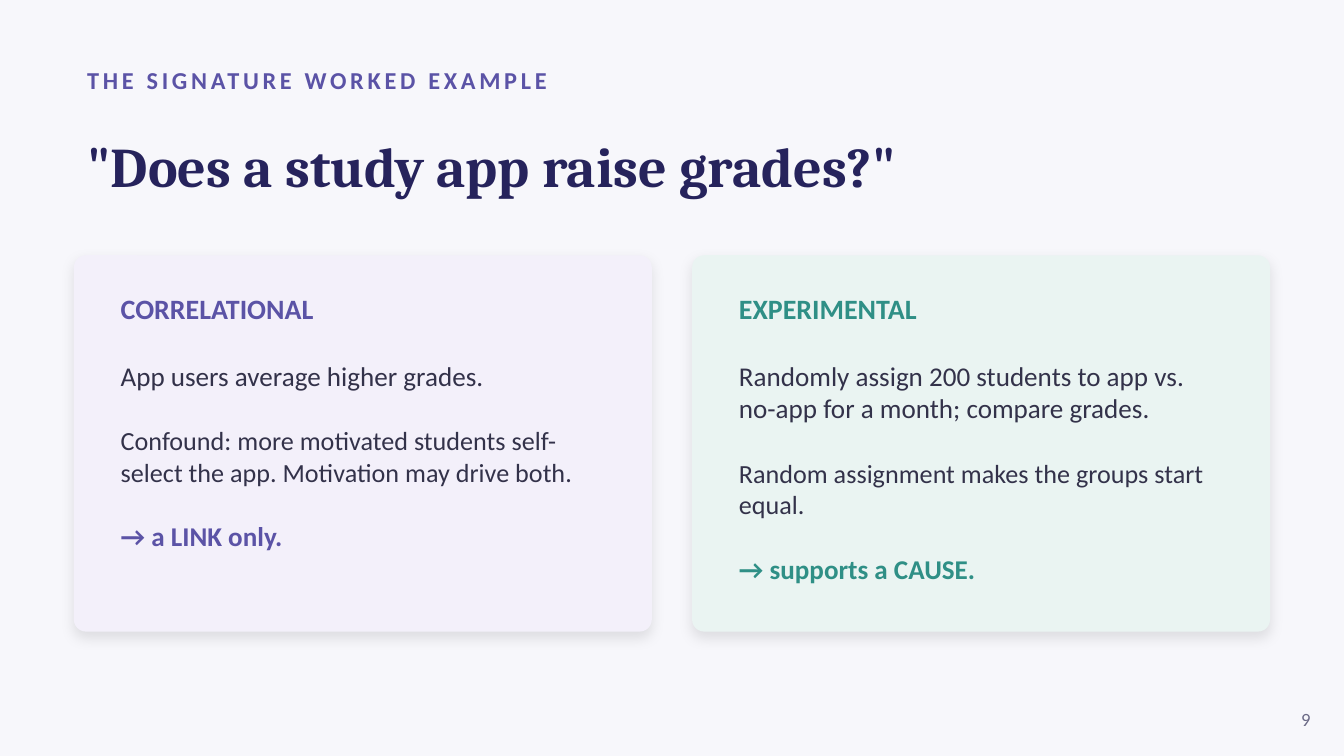
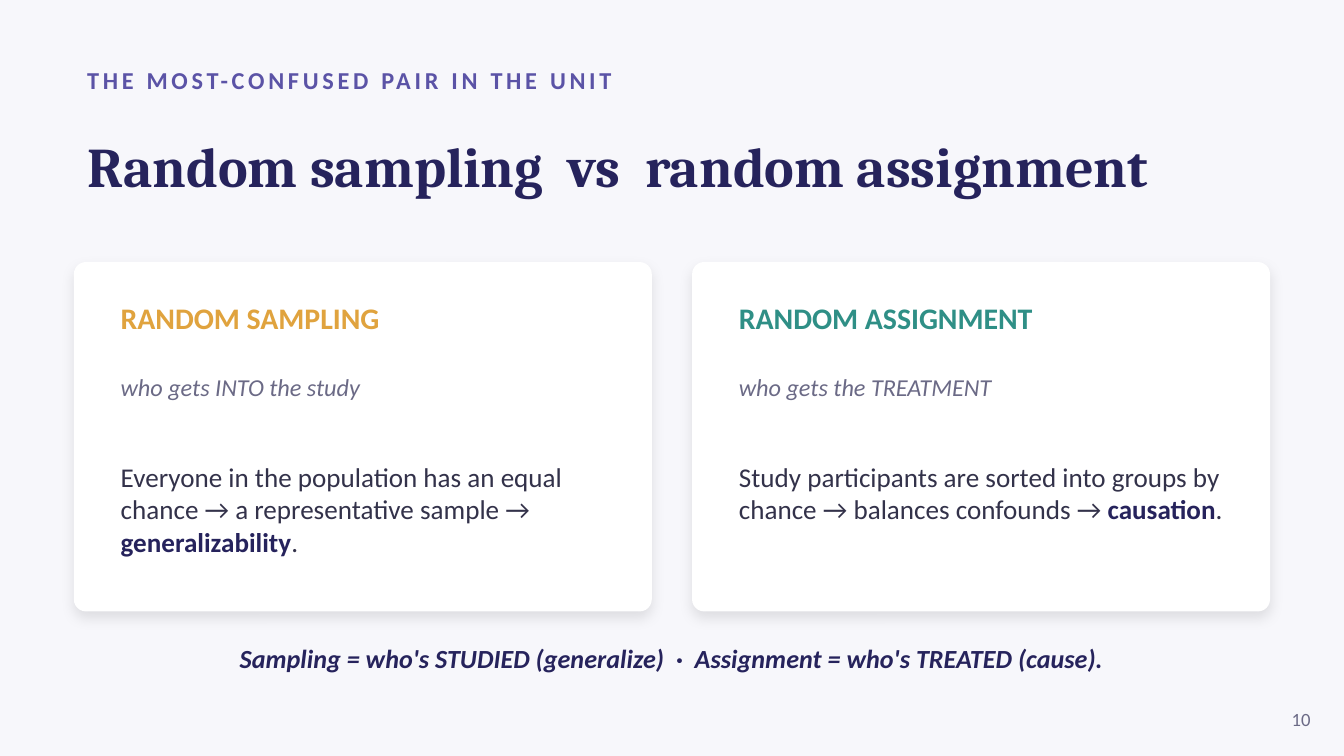
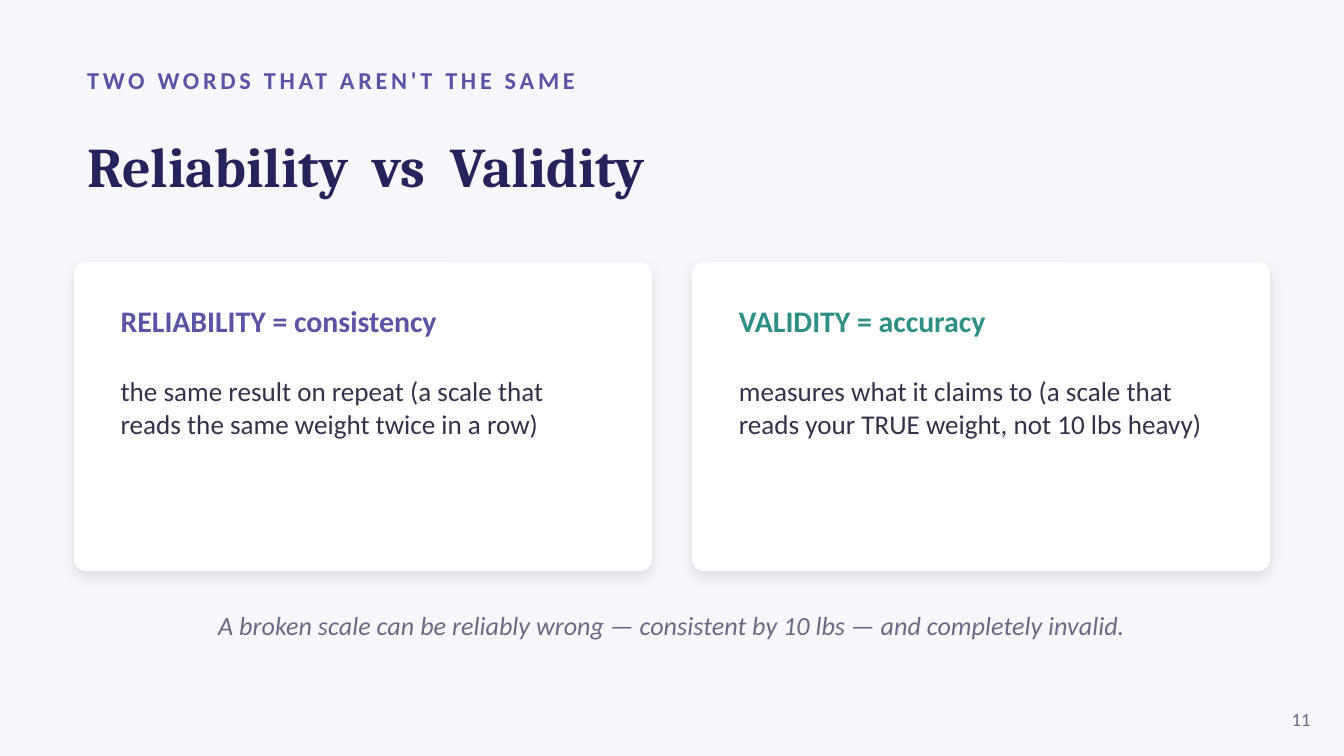
from lxml import etree
from pptx import Presentation
from pptx.dml.color import RGBColor
from pptx.enum.shapes import MSO_SHAPE as Shape
from pptx.enum.text import MSO_ANCHOR as Anchor, MSO_AUTO_SIZE as AutoSize, PP_ALIGN as Align
from pptx.oxml import parse_xml
from pptx.oxml.ns import nsdecls
from pptx.util import Pt

COLORS = {
    "background": "F7F7FB", "navy": "26235C", "purple": "5B53A6",
    "teal": "2F8F86", "amber": "E0A33E", "ink": "33324A", "muted": "6B6A86",
    "white": "FFFFFF", "lilac": "F3F0FA", "mint": "EAF4F2", "shadow": "000000",
}
LEFT, CONTENT_WIDTH = 39.6, 640.8
CARD_WIDTH, CARD_GAP, CARD_INSET, CORNER = 309.6, 21.6, 18, 6.48
LINE_HEIGHT = 1.22
TITLE_ONLY = 5


def rgb(name):
    """Return the named palette colour."""
    return RGBColor.from_string(COLORS[name])


def write(frame, text, *, size=14.5, color="ink", bold=False, italic=False,
          font="Calibri", spacing=0, align=Align.LEFT, blank_lines=0, joined=False):
    """Write text as a new paragraph, or join it to the last one."""
    para = frame.paragraphs[-1]
    if para.runs and not joined:
        para = frame.add_paragraph()
    if not joined:
        para.alignment = align
        para.space_before = Pt(0)
        para.space_after = Pt(round(blank_lines * size * LINE_HEIGHT, 1))
    span = para.add_run()
    span.text = text
    span.font.name, span.font.size = font, Pt(size)
    span.font.bold, span.font.italic = bold, italic
    span.font.color.rgb = rgb(color)
    if spacing:
        span._r.get_or_add_rPr().set("spc", str(spacing * 100))


def place(shape, box, anchor=Anchor.MIDDLE):
    """Place a text shape in its box and return its text frame."""
    shape.left, shape.top, shape.width, shape.height = (Pt(length) for length in box)
    frame = shape.text_frame
    frame.word_wrap = True
    frame.auto_size = AutoSize.NONE
    frame.vertical_anchor = anchor
    return frame


def add_text(page, box, anchor=Anchor.MIDDLE):
    """Add a text box and return its text frame."""
    return place(page.shapes.add_textbox(0, 0, 0, 0), box, anchor)


def add_shadow(shape):
    """Give a shape a soft shadow below it."""
    effects = parse_xml(
        f'<a:effectLst {nsdecls("a")}><a:outerShdw blurRad="{Pt(7)}" dist="{Pt(3)}" '
        f'dir="5400000" algn="bl" rotWithShape="0"><a:srgbClr val="{COLORS["shadow"]}">'
        '<a:alpha val="10000"/></a:srgbClr></a:outerShdw></a:effectLst>')
    properties = shape._element.spPr
    for old in properties.findall(etree.QName(effects).text):
        properties.remove(old)
    properties.append(effects)


def add_page(deck, number, label, title):
    """Add a page with its label, title and number."""
    page = deck.slides.add_slide(deck.slide_layouts[TITLE_ONLY])
    write(add_text(page, (LEFT, 30.24, 648, 25.2)), label,
          size=13, color="purple", bold=True, spacing=2)
    write(place(page.shapes.title, (LEFT, 56.16, CONTENT_WIDTH, 64.8)), title,
          size=30, color="navy", bold=True, font="Cambria")
    write(add_text(page, (673.2, 374.4, 36, 21.6)), str(number),
          size=10, color="muted", align=Align.RIGHT)
    return page


def add_card(page, box, fill, text_offset):
    """Add a rounded card and return the text frame inside it."""
    left, top, width, height = box
    card = page.shapes.add_shape(Shape.ROUNDED_RECTANGLE, *(Pt(length) for length in box))
    card.adjustments[0] = CORNER / height
    card.fill.solid()
    card.fill.fore_color.rgb = rgb(fill)
    card.line.fill.background()
    card.shadow.inherit = False
    add_shadow(card)
    text_box = (left + CARD_INSET, top + text_offset,
                width - 2 * CARD_INSET, height - text_offset - 6)
    return add_text(page, text_box, Anchor.TOP)


def add_cards(page, top, height, text_offset, fills=("white", "white")):
    """Add two cards side by side and return their text frames."""
    return [add_card(page, (LEFT + column * (CARD_WIDTH + CARD_GAP), top, CARD_WIDTH, height),
                     fill, text_offset)
            for column, fill in enumerate(fills)]


def add_takeaway(page, top, text, **style):
    """Add the centred italic line below the cards."""
    write(add_text(page, (LEFT, top, CONTENT_WIDTH, 28.8)), text,
          size=14, italic=True, align=Align.CENTER, **style)


def build_worked_example(deck, number):
    """Compare a correlational and an experimental study."""
    page = add_page(deck, number, "THE SIGNATURE WORKED EXAMPLE",
                    '"Does a study app raise grades?"')
    studies = [
        ("CORRELATIONAL", "purple", "App users average higher grades.",
         "Confound: more motivated students self-select the app. Motivation may drive both.",
         "→ a LINK only."),
        ("EXPERIMENTAL", "teal",
         "Randomly assign 200 students to app vs. no-app for a month; compare grades.",
         "Random assignment makes the groups start equal.", "→ supports a CAUSE."),
    ]
    frames = add_cards(page, 136.8, 201.6, 15.84, ("lilac", "mint"))
    for frame, (heading, accent, finding, reason, verdict) in zip(frames, studies):
        write(frame, heading, size=15, color=accent, bold=True, blank_lines=1)
        write(frame, finding, blank_lines=1)
        write(frame, reason, size=14, blank_lines=1)
        write(frame, verdict, color=accent, bold=True)


def build_random_pair(deck, number):
    """Compare random sampling and random assignment."""
    page = add_page(deck, number, "THE MOST-CONFUSED PAIR IN THE UNIT",
                    "Random sampling  vs  random assignment")
    methods = [
        ("RANDOM SAMPLING", "amber", "who gets INTO the study",
         "Everyone in the population has an equal chance → a representative sample → ",
         "generalizability"),
        ("RANDOM ASSIGNMENT", "teal", "who gets the TREATMENT",
         "Study participants are sorted into groups by chance → balances confounds → ",
         "causation"),
    ]
    frames = add_cards(page, 140.4, 187.2, 16.56)
    for frame, (heading, accent, question, process, benefit) in zip(frames, methods):
        write(frame, heading, size=16, color=accent, bold=True, blank_lines=1)
        write(frame, question, size=13, color="muted", italic=True, blank_lines=2)
        write(frame, process)
        write(frame, benefit, color="navy", bold=True, joined=True)
        write(frame, ".", joined=True)
    add_takeaway(page, 338.4,
                 "Sampling = who's STUDIED (generalize)  ·  Assignment = who's TREATED (cause).",
                 color="navy", bold=True)


def build_measure_pair(deck, number):
    """Compare reliability and validity."""
    page = add_page(deck, number, "TWO WORDS THAT AREN'T THE SAME",
                    "Reliability  vs  Validity")
    qualities = [
        ("RELIABILITY = consistency", "purple",
         "the same result on repeat (a scale that reads the same weight twice in a row)"),
        ("VALIDITY = accuracy", "teal",
         "measures what it claims to (a scale that reads your TRUE weight, not 10 lbs heavy)"),
    ]
    frames = add_cards(page, 140.4, 165.6, 18)
    for frame, (heading, accent, meaning) in zip(frames, qualities):
        write(frame, heading, size=16, color=accent, bold=True, blank_lines=1)
        write(frame, meaning)
    add_takeaway(page, 320.4,
                 "A broken scale can be reliably wrong — consistent by 10 lbs — "
                 "and completely invalid.", color="muted")


def main():
    """Build and save the deck."""
    deck = Presentation()
    deck.slide_width, deck.slide_height = Pt(720), Pt(405)
    background = deck.slide_master.background.fill
    background.solid()
    background.fore_color.rgb = rgb("background")
    builders = (build_worked_example, build_random_pair, build_measure_pair)
    for number, build in enumerate(builders, start=9):
        build(deck, number)
    deck.save("out.pptx")


if __name__ == "__main__":
    main()
